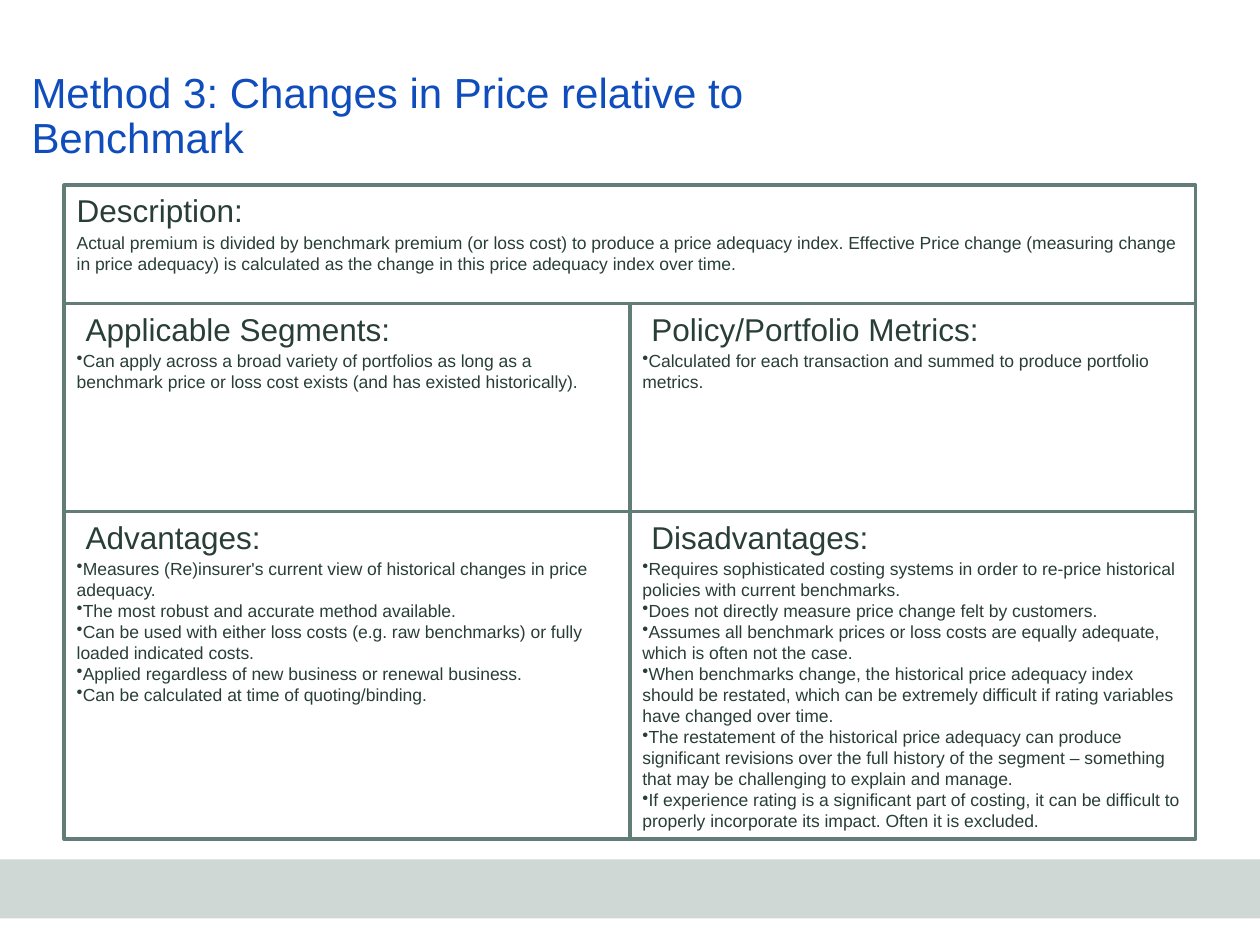
from lxml import etree
from pptx import Presentation
from pptx.dml.color import RGBColor
from pptx.enum import shapes, text
from pptx.oxml import ns
from pptx.util import Inches, Pt

BLUE = RGBColor(0x0F, 0x4D, 0xBC)
DARK_GREEN = RGBColor(0x28, 0x3E, 0x36)
BORDER_GREEN = RGBColor(0x62, 0x7D, 0x77)
BAND_GREY = RGBColor(0xD0, 0xD8, 0xD6)

LEFT, MIDDLE, RIGHT = 0.51, 5, 9.49
ROWS = [1.47, 2.41, 4.06, 6.66]
HEADING_HEIGHT = 0.4
BODY_OFFSET = 0.32
HEADING_INDENT = 0.07

TITLE_LINES = ["Method 3: Changes in Price relative to", "Benchmark"]
DESCRIPTION = [
    "Actual premium is divided by benchmark premium (or loss cost) to produce a price "
    "adequacy index. Effective Price change (measuring change in price adequacy) is "
    "calculated as the change in this price adequacy index over time.",
]
SEGMENTS = [
    "Can apply across a broad variety of portfolios as long as a benchmark price or "
    "loss cost exists (and has existed historically).",
]
METRICS = [
    "Calculated for each transaction and summed to produce portfolio metrics.",
]
ADVANTAGES = [
    "Measures (Re)insurer's current view of historical changes in price adequacy.",
    "The most robust and accurate method available.",
    "Can be used with either loss costs (e.g. raw benchmarks) or fully loaded "
    "indicated costs.",
    "Applied regardless of new business or renewal business.",
    "Can be calculated at time of quoting/binding.",
]
DISADVANTAGES = [
    "Requires sophisticated costing systems in order to re-price historical policies "
    "with current benchmarks.",
    "Does not directly measure price change felt by customers.",
    "Assumes all benchmark prices or loss costs are equally adequate, which is often "
    "not the case.",
    "When benchmarks change, the historical price adequacy index should be restated, "
    "which can be extremely difficult if rating variables have changed over time.",
    "The restatement of the historical price adequacy can produce significant "
    "revisions over the full history of the segment – something that may be "
    "challenging to explain and manage.",
    "If experience rating is a significant part of costing, it can be difficult to "
    "properly incorporate its impact. Often it is excluded.",
]


def set_values(target, values):
    for name, value in values.items():
        setattr(target, name, value)


def set_font(paragraph, size, color):
    set_values(paragraph.font, {"name": "Arial", "size": Pt(size)})
    paragraph.font.color.rgb = color


def add_rectangle(page, left, top, width, height):
    box = page.shapes.add_shape(
        shapes.MSO_SHAPE.RECTANGLE,
        Inches(left), Inches(top), Inches(width), Inches(height))
    box.shadow.inherit = False
    return box


def add_band(page, left, top, width, height):
    band = add_rectangle(page, left, top, width, height)
    band.fill.solid()
    band.fill.fore_color.rgb = BAND_GREY
    band.line.fill.background()


def add_title(page, left, top, width, height):
    title = page.shapes.title
    set_values(title, {"left": Inches(left), "top": Inches(top),
                       "width": Inches(width), "height": Inches(height)})
    set_values(title.text_frame, {
        "margin_left": 0, "margin_top": 0, "margin_right": 0, "margin_bottom": 0,
        "word_wrap": True, "auto_size": text.MSO_AUTO_SIZE.NONE,
        "vertical_anchor": text.MSO_ANCHOR.BOTTOM})
    para = title.text_frame.paragraphs[0]
    set_values(para, {"alignment": text.PP_ALIGN.LEFT, "line_spacing": 0.9})
    for number, line in enumerate(TITLE_LINES):
        if number:
            para.add_line_break()
        para.add_run().text = line
    for span in para.runs:
        set_font(span, 24, BLUE)


def add_text(page, left, top, width, height, lines, size, bulleted=False, indent=0):
    box = page.shapes.add_textbox(
        Inches(left), Inches(top), Inches(width), Inches(height))
    frame = box.text_frame
    set_values(frame, {"word_wrap": True,
                       "auto_size": text.MSO_AUTO_SIZE.SHAPE_TO_FIT_TEXT,
                       "margin_left": Inches(0.1 + indent)})
    for number, line in enumerate(lines):
        para = frame.add_paragraph() if number else frame.paragraphs[0]
        if bulleted:
            bullet = etree.SubElement(para._p.get_or_add_pPr(), ns.qn("a:buChar"))
            bullet.set("char", "•")
        para.add_run().text = line
        set_font(para, size, DARK_GREEN)


def add_panel(page, left, top, width, height, heading, lines, bulleted=True):
    # Frame
    frame = add_rectangle(page, left, top, width, height)
    frame.fill.background()
    frame.line.color.rgb = BORDER_GREEN
    frame.line.width = Pt(2)
    # Heading and text
    add_text(page, left, top, width, HEADING_HEIGHT, [heading], 18,
             indent=HEADING_INDENT if bulleted else 0)
    add_text(page, left, top + BODY_OFFSET, width, height - BODY_OFFSET, lines, 10,
             bulleted)


def add_method_grid(page):
    # Full-width description
    add_panel(page, LEFT, ROWS[0], RIGHT - LEFT, ROWS[1] - ROWS[0],
              "Description:", DESCRIPTION, bulleted=False)
    # Two rows of two panels
    panels = [
        [("Applicable Segments:", SEGMENTS), ("Policy/Portfolio Metrics:", METRICS)],
        [("Advantages:", ADVANTAGES), ("Disadvantages:", DISADVANTAGES)],
    ]
    for row, top, bottom in zip(panels, ROWS[1:], ROWS[2:]):
        for (heading, lines), left in zip(row, [LEFT, MIDDLE]):
            add_panel(page, left, top, RIGHT - MIDDLE, bottom - top, heading, lines)


def main():
    deck = Presentation()
    set_values(deck, {"slide_width": Inches(10), "slide_height": Inches(7.5)})
    page = deck.slides.add_slide(deck.slide_layouts.get_by_name("Title Only"))
    add_band(page, 0, 6.82, 10, 0.47)
    add_title(page, 0.25, 0.53, 7.48, 0.76)
    add_method_grid(page)
    deck.save("out.pptx")


if __name__ == "__main__":
    main()
